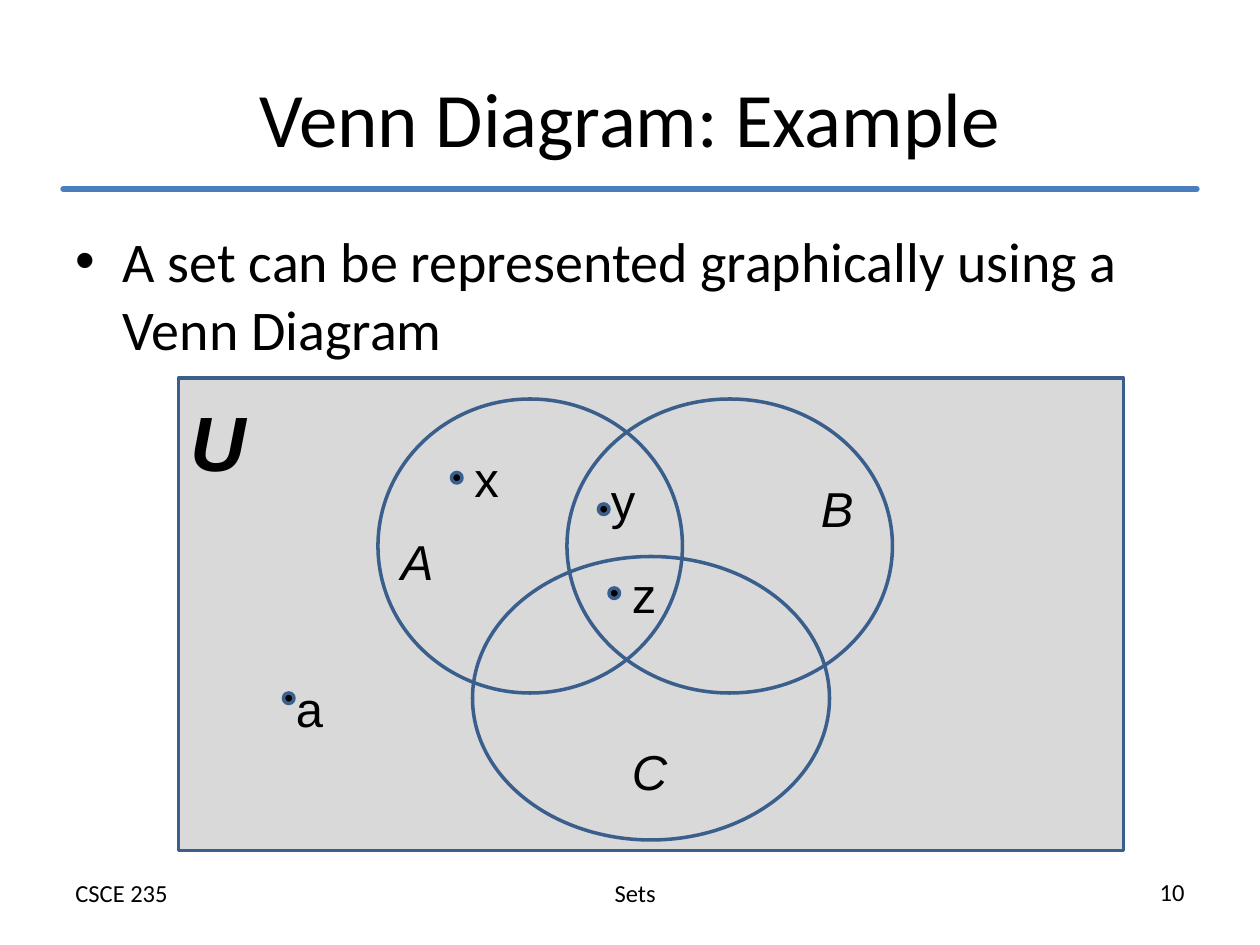
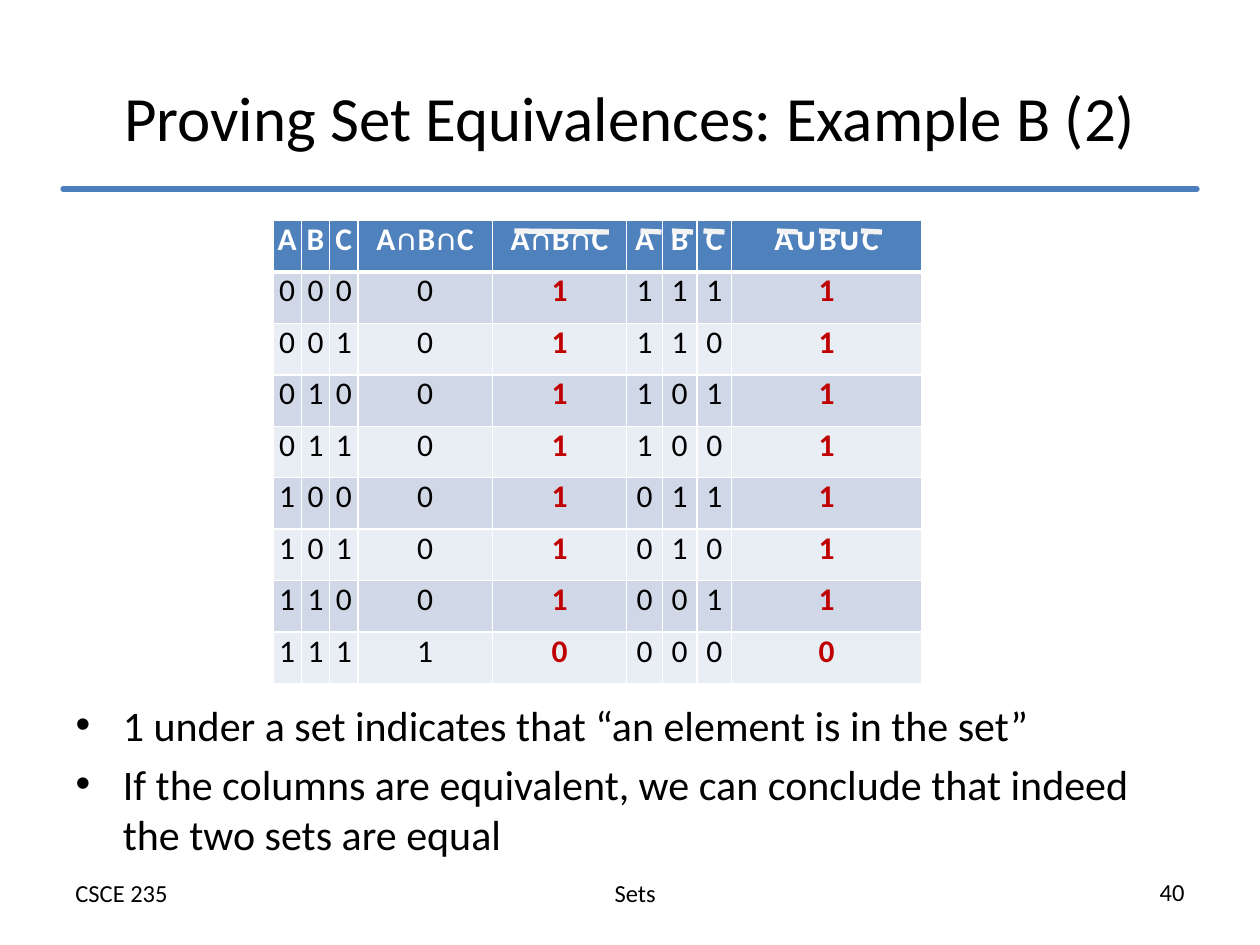
from itertools import product

from lxml.etree import SubElement
from pptx import Presentation
from pptx.dml.color import RGBColor
from pptx.enum.shapes import MSO_CONNECTOR, MSO_SHAPE
from pptx.enum.text import MSO_ANCHOR, MSO_AUTO_SIZE, PP_ALIGN
from pptx.oxml.ns import qn
from pptx.util import Pt

PX = 7620

BLACK = RGBColor(0x00, 0x00, 0x00)
WHITE = RGBColor(0xFF, 0xFF, 0xFF)
RULE_BLUE = RGBColor(0x4B, 0x7E, 0xBC)
OUTLINE_BLUE = RGBColor(0x3A, 0x5F, 0x8C)
UNIVERSE_GRAY = RGBColor(0xD9, 0xD9, 0xD9)
HEADER_BLUE = RGBColor(0x4F, 0x81, 0xBD)
BAND_COLORS = (RGBColor(0xD0, 0xD8, 0xE8), RGBColor(0xE9, 0xED, 0xF4))
RESULT_RED = RGBColor(0xC0, 0x00, 0x00)
OVERLINE_GRAY = RGBColor(0xF2, 0xF2, 0xF2)

TITLE_BOX = (60, 36, 1080, 150)
FOOTERS = (
    (60, 830, PP_ALIGN.LEFT, "CSCE 235"),
    (430, 830, PP_ALIGN.CENTER, "Sets"),
    (790, 829, PP_ALIGN.RIGHT, None),
)

UNIVERSE_BOX = (170, 360, 900, 450)
SET_OVALS = ((190, 20, 290, 280), (370, 20, 310, 280), (280, 170, 340, 270))
SET_LABELS = (("A", 200, 140), ("B", 600, 90), ("C", 420, 340))
ELEMENTS = (
    ("a", (100, 280), (100, 300)),
    ("x", (270, 61), (260, 90)),
    ("y", (400, 82), (400, 120)),
    ("z", (420, 172), (410, 200)),
)

TABLE_CORNER = (260, 210)
COLUMN_WIDTHS = (27, 27, 27, 128, 128, 34, 33, 33, 181)
ROW_HEIGHT = 49
HEADERS = ("A", "B", "C", "A∩B∩C", "A∩B∩C", "A", "B", "C", "A∪B∪C")
RESULT_COLUMNS = (4, 8)
OVERLINES = ((230, 90), (350, 20), (380, 20), (410, 20), (480, 20), (520, 20), (560, 20))


def emu(*lengths):
    return [length * PX for length in lengths]


def shifted(box, left, top, *size):
    return (box[0] + left, box[1] + top, *size)


def write(para, text, align=None, **style):
    span = para.add_run()
    span.text = text
    color = style.pop("color", BLACK)
    for name, value in {"name": "Calibri", **style}.items():
        setattr(span.font, name, value)
    span.font.color.rgb = color
    if align is not None:
        para.alignment = align


def add_label(page, box, text, align=PP_ALIGN.LEFT, **style):
    frame = page.shapes.add_textbox(*emu(*box)).text_frame
    frame.word_wrap = True
    write(frame.paragraphs[0], text, align, **style)


def add_line(page, start, end, color, cap="flat"):
    line = page.shapes.add_connector(MSO_CONNECTOR.STRAIGHT, *emu(*start, *end))
    line.line.color.rgb = color
    line.line.width = Pt(3)
    line.get_or_add_ln().set("cap", cap)
    SubElement(line.element.spPr, qn("a:effectLst"))


def add_outlined(page, kind, box, fill=None):
    shape = page.shapes.add_shape(kind, *emu(*box))
    shape.shadow.inherit = False
    if fill is None:
        shape.fill.background()
    else:
        shape.fill.solid()
        shape.fill.fore_color.rgb = fill
    shape.line.color.rgb = OUTLINE_BLUE
    shape.line.width = Pt(2)


def fill_placeholder(holder, box, texts, size, align=None):
    for name, length in zip(("left", "top", "width", "height"), emu(*box)):
        setattr(holder, name, length)
    frame = holder.text_frame
    frame.auto_size = MSO_AUTO_SIZE.NONE
    for index, text in enumerate(texts):
        para = frame.add_paragraph() if index else frame.paragraphs[0]
        write(para, text, align, size=Pt(size))


def add_page(deck, title, title_size, number, bullets, bullet_box, bullet_size):
    page = deck.slides.add_slide(deck.slide_layouts[1])
    fill_placeholder(page.shapes.title, TITLE_BOX, [title], title_size, PP_ALIGN.CENTER)
    fill_placeholder(page.placeholders[1], bullet_box, bullets, bullet_size)
    for left, top, align, text in FOOTERS:
        add_label(page, (left, top, 350, 41), text or number, align, size=Pt(14))
    add_line(page, (60, 180), (1140, 180), RULE_BLUE, "rnd")
    return page


def draw_venn(page, box):
    add_outlined(page, MSO_SHAPE.RECTANGLE, box, UNIVERSE_GRAY)
    add_label(page, shifted(box, 0, 10, 70, 101), "U",
              name="Arial", size=Pt(44), bold=True, italic=True)
    for oval in SET_OVALS:
        add_outlined(page, MSO_SHAPE.OVAL, shifted(box, *oval))
    for text, label, dot in ELEMENTS:
        add_label(page, shifted(box, *label, 40, 68), text, name="Arial", size=Pt(28))
        add_outlined(page, MSO_SHAPE.OVAL, shifted(box, *dot, 10, 10), BLACK)
    for text, left, top in SET_LABELS:
        add_label(page, shifted(box, left, top, 50, 68), text,
                  name="Arial", size=Pt(28), italic=True)


def truth_rows():
    for a, b, c in product((0, 1), repeat=3):
        meet = a & b & c
        complements = (1 - a, 1 - b, 1 - c)
        yield (a, b, c, meet, 1 - meet, *complements, max(complements))


def add_borders(cell, row):
    widths = {"L": 1, "R": 1, "T": 3 if row == 1 else 1, "B": 3 if row == 0 else 1}
    properties = cell._tc.get_or_add_tcPr()
    for side, width in widths.items():
        border = SubElement(properties, qn(f"a:ln{side}"), w=str(Pt(width)))
        fill = SubElement(border, qn("a:solidFill"))
        SubElement(fill, qn("a:srgbClr"), val=str(WHITE))


def format_cell(cell, text, row, column):
    add_borders(cell, row)
    cell.fill.solid()
    cell.fill.fore_color.rgb = BAND_COLORS[(row - 1) % 2] if row else HEADER_BLUE
    for side in ("left", "top", "right", "bottom"):
        setattr(cell, f"margin_{side}", 0)
    cell.vertical_anchor = MSO_ANCHOR.TOP
    is_result = column in RESULT_COLUMNS
    color = (RESULT_RED if is_result else BLACK) if row else WHITE
    write(cell.text_frame.paragraphs[0], text, PP_ALIGN.CENTER,
          size=Pt(18), bold=row == 0 or is_result, color=color)


def draw_truth_table(page, corner):
    rows = [HEADERS, *truth_rows()]
    size = (sum(COLUMN_WIDTHS), ROW_HEIGHT * len(rows))
    table = page.shapes.add_table(len(rows), len(HEADERS), *emu(*corner, *size)).table
    for column, width in zip(table.columns, COLUMN_WIDTHS):
        column.width = width * PX
    for row, values in enumerate(rows):
        table.rows[row].height = ROW_HEIGHT * PX
        for column, value in enumerate(values):
            format_cell(table.cell(row, column), str(value), row, column)
    for left, length in OVERLINES:
        add_line(page, shifted(corner, left, 10), shifted(corner, left + length, 11),
                 OVERLINE_GRAY)


def main():
    deck = Presentation()
    deck.slide_width, deck.slide_height = emu(1200, 900)

    venn_page = add_page(
        deck, "Venn Diagram: Example", 44, "10",
        ["A set can be represented graphically using a Venn Diagram"],
        (60, 210, 1080, 594), 32)
    draw_venn(venn_page, UNIVERSE_BOX)

    proof_page = add_page(
        deck, "Proving Set Equivalences: Example B (2)", 36, "40",
        ["1 under a set indicates that “an element is in the set”",
         "If the columns are equivalent, we can conclude that indeed the two sets are equal"],
        (60, 660, 1080, 140), 24)
    draw_truth_table(proof_page, TABLE_CORNER)

    deck.save("out.pptx")


if __name__ == "__main__":
    main()
